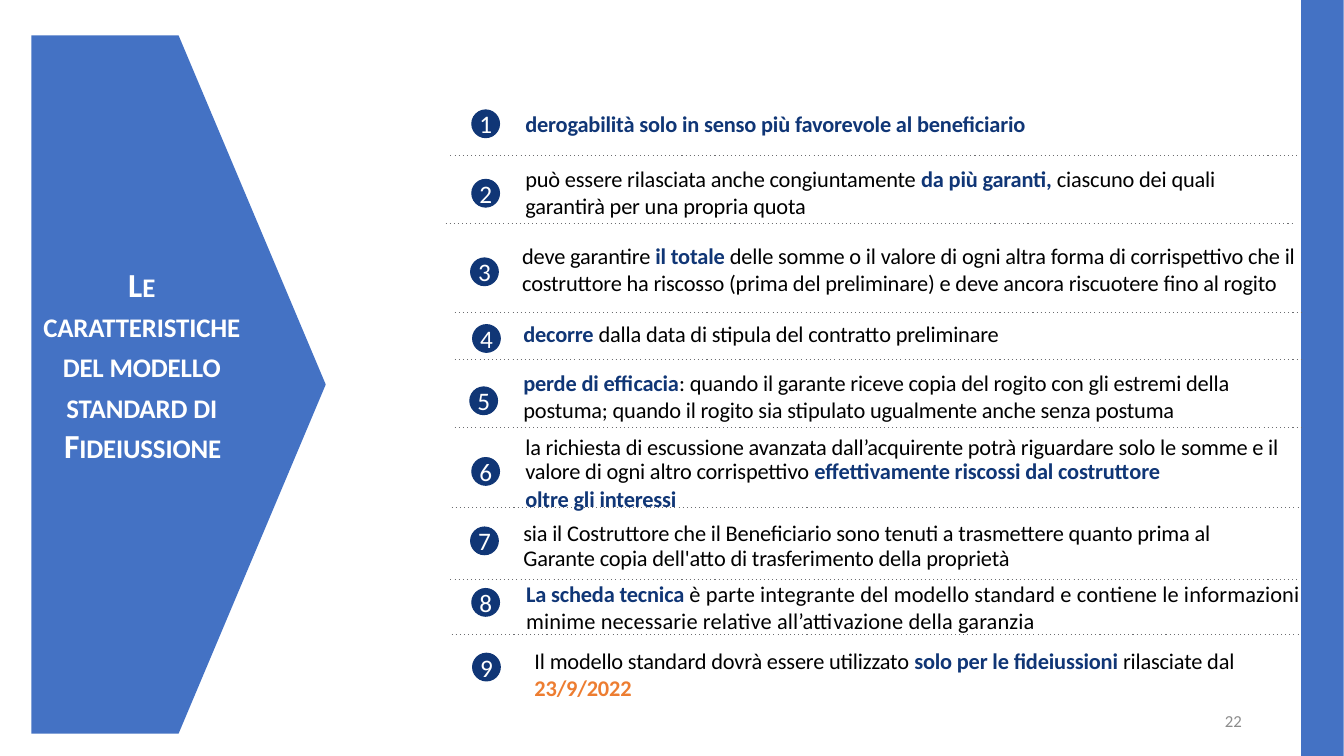
import pptx
import pptx.util
import pptx.dml.color
import pptx.enum.shapes
import pptx.enum.text
import lxml.etree

Cm, Pt = pptx.util.Cm, pptx.util.Pt
RGB = pptx.dml.color.RGBColor
SHAPE = pptx.enum.shapes.MSO_SHAPE
ALIGN = pptx.enum.text.PP_ALIGN
ANCHOR = pptx.enum.text.MSO_ANCHOR

BLUE = RGB(0x44, 0x72, 0xC4)
NAVY = RGB(0x10, 0x36, 0x76)
ORANGE = RGB(0xED, 0x7D, 0x31)
BLACK = RGB(0, 0, 0)
WHITE = RGB(255, 255, 255)
GRAY = RGB(0x8C, 0x8C, 0x8C)
RULE = RGB(0x6C, 0x6D, 0x70)

# Content: each point is a list of paragraphs, each a list of (text, colour)
TITLE = "Le caratteristiche del modello standard di Fideiussione"
PAGE = "22"
POINTS = [
    [[("derogabilità solo in senso più favorevole al beneficiario", NAVY)]],
    [[("può essere rilasciata anche congiuntamente ", BLACK),
      ("da più garanti, ", NAVY),
      ("ciascuno dei quali garantirà per una propria quota", BLACK)]],
    [[("deve garantire ", BLACK), ("il totale ", NAVY),
      ("delle somme o il valore di ogni altra forma di corrispettivo che il "
       "costruttore ha riscosso (prima del preliminare) e deve ancora "
       "riscuotere fino al rogito", BLACK)]],
    [[("decorre", NAVY),
      (" dalla data di stipula del contratto preliminare", BLACK)]],
    [[("perde di efficacia", NAVY),
      (": quando il garante riceve copia del rogito con gli estremi della "
       "postuma; quando il rogito sia stipulato ugualmente anche senza "
       "postuma", BLACK)]],
    [[("la richiesta di escussione avanzata dall’acquirente potrà riguardare "
       "solo le somme e il valore di ogni altro corrispettivo ", BLACK),
      ("effettivamente riscossi dal costruttore", NAVY)],
     [("oltre gli interessi", NAVY)]],
    [[("sia il Costruttore che il Beneficiario sono tenuti a trasmettere "
       "quanto prima al Garante copia dell'atto di trasferimento della "
       "proprietà", BLACK)]],
    [[("La scheda tecnica ", NAVY),
      ("è parte integrante del modello standard e contiene le informazioni "
       "minime necessarie relative all’attivazione della garanzia", BLACK)]],
    [[("Il modello standard dovrà essere utilizzato ", BLACK),
      ("solo per le fideiussioni ", NAVY), ("rilasciate dal ", BLACK),
      ("23/9/2022", ORANGE)]],
]

# Places in cm: dots (left, top), text (left, top, width, height), rules
DOTS = [(11.89, 2.77), (11.89, 4.52), (11.86, 6.5), (11.91, 8.18),
        (11.84, 9.75), (11.89, 11.53), (11.86, 13.28), (11.89, 14.83),
        (11.91, 16.46)]
BOXES = [(13.21, 2.74, 18.62, 0.71), (13.21, 4.14, 17.88, 1.4),
         (13.13, 6.07, 20.22, 1.4), (13.16, 8.08, 18.14, 0.69),
         (13.16, 9.27, 19.43, 1.4), (13.21, 10.87, 20.22, 2.03),
         (13.16, 13.08, 18.08, 1.32), (13.23, 14.58, 19.66, 1.4),
         (13.44, 16.28, 19.66, 1.4)]
RULES = [(11.35, 3.91), (11.23, 5.64), (11.46, 7.87), (11.46, 9.07),
         (11.46, 10.77), (11.38, 12.78), (11.35, 14.6), (11.38, 15.98)]
DOT, SPAN = 0.7, 21.41

# Line pitch, space before (pt) and top inset (cm)
PLAIN, TIGHT, FIXED = (None, 0.9, 0.03), (17.3, 3.1, 0.1), (18.2, 0.9, 0.03)
PITCH = [TIGHT, PLAIN, PLAIN, FIXED, PLAIN, TIGHT, FIXED, PLAIN, PLAIN]
WIDE = 7  # index of the point whose plain text is spaced out

deck = pptx.Presentation()
deck.slide_width, deck.slide_height = Cm(33.87), Cm(19.05)
slide = deck.slides.add_slide(deck.slide_layouts[6])
shapes = slide.shapes


def block(kind, fill, *place):
    shape = shapes.add_shape(kind, *map(Cm, place))
    shape.shadow.inherit = False
    shape.fill.solid()
    shape.fill.fore_color.rgb = fill
    shape.line.fill.background()
    return shape


def pad(frame, top=0, low=0):
    frame.margin_left = frame.margin_right = 0
    frame.margin_top, frame.margin_bottom = Cm(top), Cm(low)


def style(para, size, color=None, align=ALIGN.LEFT):
    para.alignment = align
    para.font.name, para.font.size = "Calibri", Pt(size)
    if color is not None:
        para.font.color.rgb = color


def label(frame, text, size, color, align):
    frame.vertical_anchor = ANCHOR.MIDDLE
    para = frame.paragraphs[0]
    run = para.add_run()
    run.text = text
    style(para, size, color, align)
    return run


# Side bar, page number and title arrow
block(SHAPE.RECTANGLE, BLUE, 32.79, 0, 1.07, 19.05)
page = shapes.add_textbox(Cm(23.93), Cm(17.65), Cm(7.62), Cm(1.02))
page.text_frame.word_wrap = True
label(page.text_frame, PAGE, 12, GRAY, ALIGN.RIGHT)

arrow = block(SHAPE.PENTAGON, BLUE, 0.79, 0.89, 7.42, 17.6)
arrow.adjustments[0] = 0.5
pad(arrow.text_frame, low=1.02)
run = label(arrow.text_frame, TITLE, 24, WHITE, ALIGN.CENTER)
run.font.bold = True
props = run.font._element
props.set("cap", "small")
props.set("spc", "-10")

# Dotted rules
for left, top in RULES:
    rule = shapes.add_connector(
        pptx.enum.shapes.MSO_CONNECTOR.STRAIGHT,
        Cm(left), Cm(top), Cm(left + SPAN), Cm(top))
    rule.line.color.rgb = RULE
    rule.line.width = Pt(0.75)
    part = rule._element.spPr
    ns = pptx.oxml.ns.qn
    dash = lxml.etree.SubElement(part.find(ns("a:ln")), ns("a:prstDash"))
    dash.set("val", "dot")
    lxml.etree.SubElement(part, ns("a:effectLst"))

# Numbered points
rows = zip(POINTS, DOTS, BOXES, PITCH)
for index, (point, spot, place, (pitch, before, top)) in enumerate(rows):
    dot = block(SHAPE.OVAL, NAVY, *spot, DOT, DOT)
    dot.line.color.rgb = NAVY
    dot.line.width = Pt(0.75)
    pad(dot.text_frame)
    dot.text_frame.word_wrap = False
    label(dot.text_frame, str(index + 1), 18, WHITE, ALIGN.CENTER)

    frame = shapes.add_textbox(*map(Cm, place)).text_frame
    frame.word_wrap = True
    pad(frame, top)
    for order, parts in enumerate(point):
        para = frame.add_paragraph() if order else frame.paragraphs[0]
        style(para, 16)
        para.space_before = Pt(before)
        if pitch:
            para.line_spacing = Pt(pitch)
        para._p.get_or_add_pPr().set("marL", str(Cm(0.03)))
        for text, color in parts:
            run = para.add_run()
            run.text = text
            run.font.bold = color != BLACK
            run.font.color.rgb = color
            loose = index == WIDE and color == BLACK
            run.font._element.set("spc", "10" if loose else "-10")

deck.save("out.pptx")
